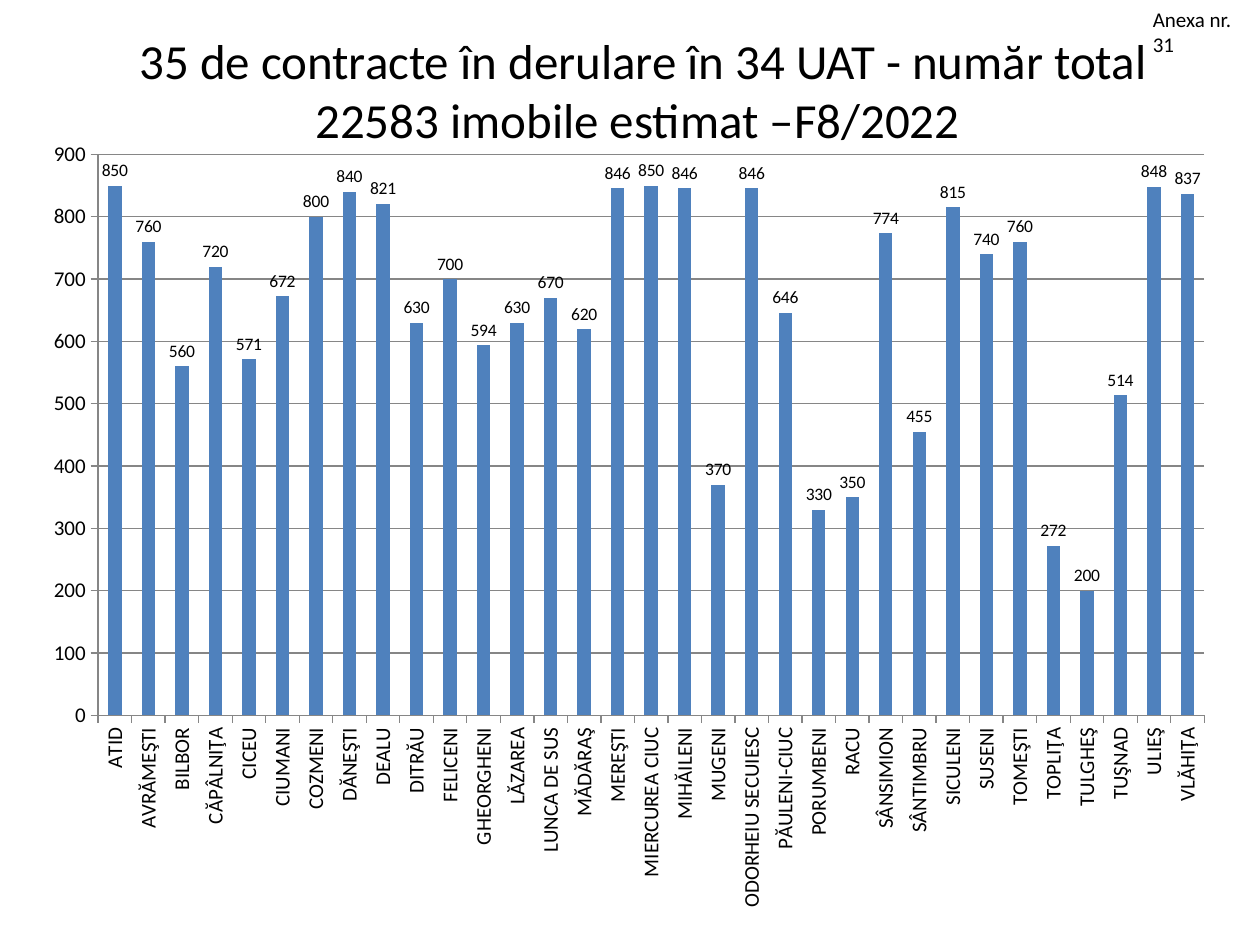
from dataclasses import dataclass

from pptx import Presentation
from pptx.chart.axis import _BaseAxis
from pptx.chart.data import CategoryChartData
from pptx.dml.color import RGBColor
from pptx.enum.chart import XL_CHART_TYPE, XL_LABEL_POSITION, XL_TICK_MARK
from pptx.enum.text import MSO_ANCHOR, PP_ALIGN
from pptx.slide import Slide
from pptx.text.text import Font
from pptx.util import Cm, Pt

COLORS = {"text": "000000", "bar": "4F81BD", "line": "868686"}
FONT_NAME = "Calibri"

CONTRACTS = {
    "ATID": 850, "AVRĂMEŞTI": 760, "BILBOR": 560, "CĂPÂLNIŢA": 720,
    "CICEU": 571, "CIUMANI": 672, "COZMENI": 800, "DĂNEŞTI": 840,
    "DEALU": 821, "DITRĂU": 630, "FELICENI": 700, "GHEORGHENI": 594,
    "LĂZAREA": 630, "LUNCA DE SUS": 670, "MĂDĂRAŞ": 620, "MEREŞTI": 846,
    "MIERCUREA CIUC": 850, "MIHĂILENI": 846, "MUGENI": 370,
    "ODORHEIU SECUIESC": 846, "PĂULENI-CIUC": 646, "PORUMBENI": 330,
    "RACU": 350, "SÂNSIMION": 774, "SÂNTIMBRU": 455, "SICULENI": 815,
    "SUSENI": 740, "TOMEŞTI": 760, "TOPLIŢA": 272, "TULGHEŞ": 200,
    "TUŞNAD": 514, "ULIEŞ": 848, "VLĂHIŢA": 837,
}


@dataclass
class Label:
    text: str
    left: float
    top: float
    width: float
    height: float
    size: int
    alignment: PP_ALIGN
    anchor: MSO_ANCHOR


LABELS = [
    Label(" 35 de contracte în derulare în 34 UAT - număr total 22583 imobile estimat –F8/2022",
          1.52, 0.79, 22.66, 2.03, 28, PP_ALIGN.CENTER, MSO_ANCHOR.MIDDLE),
    Label("Anexa nr. 31", 22.99, 0, 2.41, 0.77, 12, PP_ALIGN.LEFT, MSO_ANCHOR.TOP),
]


def set_values(target: object, values: dict) -> None:
    for name, value in values.items():
        setattr(target, name, value)


def format_font(font: Font, size: int) -> None:
    set_values(font, {"name": FONT_NAME, "size": Pt(size), "bold": False})
    font.color.rgb = RGBColor.from_string(COLORS["text"])


def add_label(slide: Slide, label: Label) -> None:
    shape = slide.shapes.add_textbox(
        Cm(label.left), Cm(label.top), Cm(label.width), Cm(label.height))
    set_values(shape.text_frame, {"word_wrap": True, "vertical_anchor": label.anchor})
    paragraph = shape.text_frame.paragraphs[0]
    paragraph.alignment = label.alignment
    run = paragraph.add_run()
    run.text = label.text
    format_font(run.font, label.size)


def format_axis(axis: _BaseAxis, values: dict) -> None:
    set_values(axis, {"major_tick_mark": XL_TICK_MARK.OUTSIDE,
                      "minor_tick_mark": XL_TICK_MARK.NONE, **values})
    format_font(axis.tick_labels.font, 12)
    lines = [axis.format.line]
    if axis.has_major_gridlines:
        lines.append(axis.major_gridlines.format.line)
    for line in lines:
        line.color.rgb = RGBColor.from_string(COLORS["line"])
        line.width = Pt(0.75)


def add_contract_chart(slide: Slide) -> None:
    chart_data = CategoryChartData()
    chart_data.categories = list(CONTRACTS)
    chart_data.add_series("Series 1", list(CONTRACTS.values()))
    chart = slide.shapes.add_chart(
        XL_CHART_TYPE.COLUMN_CLUSTERED,
        Cm(0.6), Cm(2.54), Cm(24.16), Cm(16.08), chart_data).chart
    set_values(chart, {"has_legend": False, "has_title": False})
    format_font(chart.font, 18)
    format_axis(chart.category_axis, {"has_major_gridlines": False})
    format_axis(chart.value_axis, {"has_major_gridlines": True, "minimum_scale": 0,
                                   "maximum_scale": 900, "major_unit": 100})
    category_text = chart.category_axis._element.find("{*}txPr/{*}bodyPr")
    category_text.set("rot", "-5400000")
    category_text.set("vert", "horz")

    plot = chart.plots[0]
    set_values(plot, {"gap_width": 150, "vary_by_categories": False,
                      "has_data_labels": True})
    set_values(plot.data_labels, {"show_value": True,
                                  "position": XL_LABEL_POSITION.OUTSIDE_END})
    format_font(plot.data_labels.font, 10)
    fill = plot.series[0].format.fill
    fill.solid()
    fill.fore_color.rgb = RGBColor.from_string(COLORS["bar"])


def main() -> None:
    presentation = Presentation()
    set_values(presentation, {"slide_width": Cm(25.4), "slide_height": Cm(19.05)})
    slide = presentation.slides.add_slide(presentation.slide_layouts[6])
    for label in LABELS:
        add_label(slide, label)
    add_contract_chart(slide)
    presentation.save("out.pptx")


if __name__ == "__main__":
    main()
